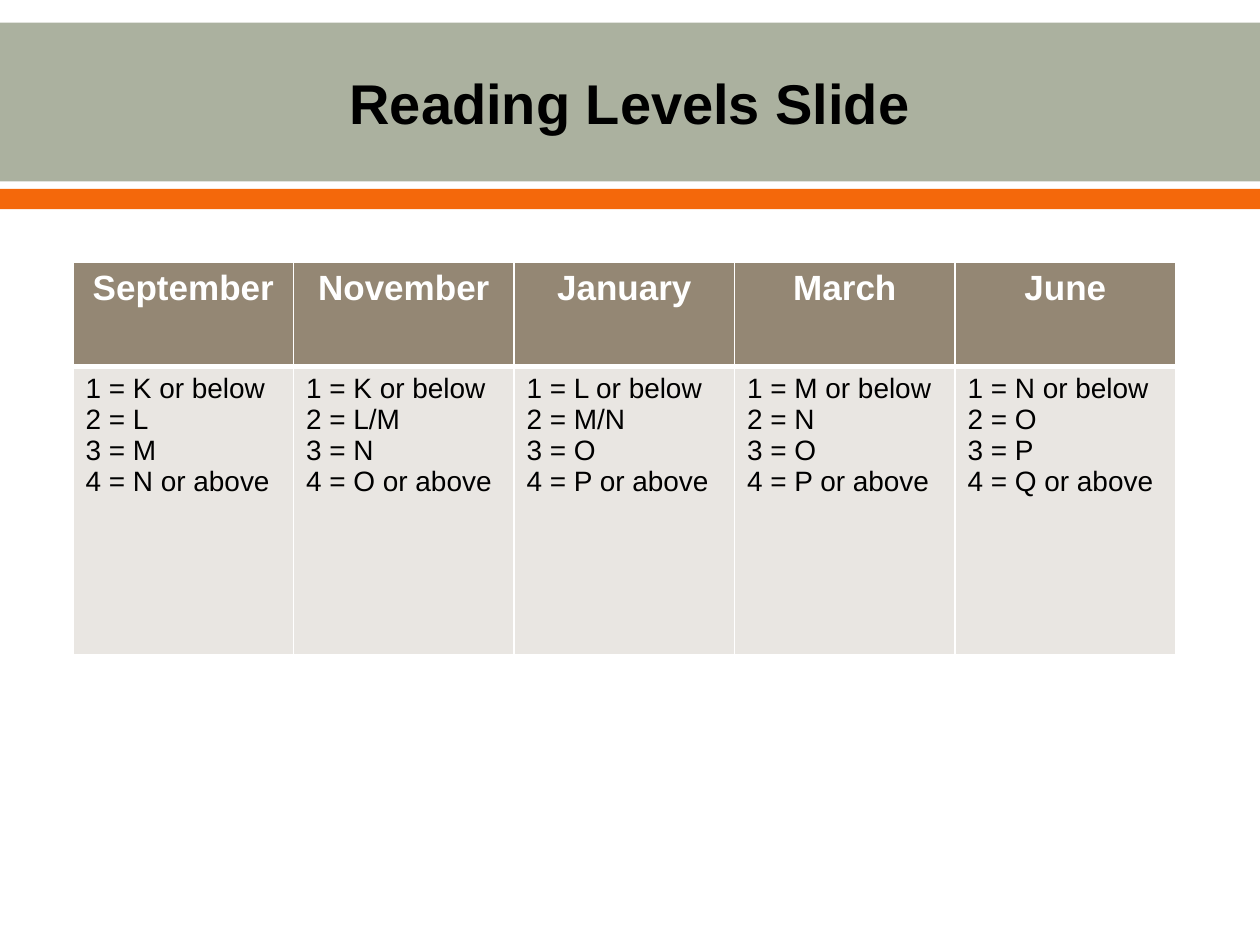
from lxml.etree import SubElement
from pptx import Presentation
from pptx.dml.color import RGBColor
from pptx.enum.shapes import MSO_SHAPE
from pptx.enum.text import MSO_ANCHOR, PP_ALIGN
from pptx.oxml.ns import qn
from pptx.util import Inches, Pt

TITLE = "Reading Levels Slide"
LEVELS = {
    "September": ["K or below", "L", "M", "N or above"],
    "November": ["K or below", "L/M", "N", "O or above"],
    "January": ["L or below", "M/N", "O", "P or above"],
    "March": ["M or below", "N", "O", "P or above"],
    "June": ["N or below", "O", "P", "Q or above"],
}
COLORS = {
    "band": "ABB19F",
    "stripe": "F4680B",
    "header": "948774",
    "body": "E9E6E2",
    "white": "FFFFFF",
    "black": "000000",
}
FONT = "Arial"
COLUMN_WIDTH = 1.75
ROW_HEIGHTS = [0.83, 2.29]


def color(name):
    return RGBColor.from_string(COLORS[name])


def add_bar(page, top, height, fill):
    """Add a full-width rectangle without an outline."""
    bar = page.shapes.add_shape(
        MSO_SHAPE.RECTANGLE, 0, Inches(top), Inches(10), Inches(height))
    bar.shadow.inherit = False
    bar.fill.solid()
    bar.fill.fore_color.rgb = color(fill)
    bar.line.fill.background()


def write_lines(frame, lines, size, ink, bold=False, align=PP_ALIGN.LEFT):
    for index, line in enumerate(lines):
        para = frame.add_paragraph() if index else frame.paragraphs[0]
        para.alignment = align
        span = para.add_run()
        span.text = line
        span.font.name = FONT
        span.font.size = Pt(size)
        span.font.bold = bold
        span.font.color.rgb = color(ink)


def set_borders(cell, widths):
    """Draw white borders; widths maps each side (L, R, T, B) to points."""
    properties = cell._tc.get_or_add_tcPr()
    for side, width in widths.items():
        line = SubElement(properties, qn(f"a:ln{side}"), w=str(Pt(width)))
        fill = SubElement(line, qn("a:solidFill"))
        SubElement(fill, qn("a:srgbClr"), val=COLORS["white"])


def fill_cell(cell, lines, fill, borders, **style):
    set_borders(cell, borders)
    cell.fill.solid()
    cell.fill.fore_color.rgb = color(fill)
    write_lines(cell.text_frame, lines, **style)


def add_title(page):
    box = page.shapes.add_textbox(Inches(0.5), Inches(0.2), Inches(9), Inches(1.22))
    frame = box.text_frame
    frame.word_wrap = True
    frame.vertical_anchor = MSO_ANCHOR.MIDDLE
    frame.margin_top = frame.margin_bottom = Inches(0.1)
    write_lines(frame, [TITLE], 32, "black", bold=True, align=PP_ALIGN.CENTER)


def add_levels_table(page):
    table = page.shapes.add_table(
        len(ROW_HEIGHTS), len(LEVELS), Inches(0.58), Inches(2.08),
        Inches(COLUMN_WIDTH * len(LEVELS)), Inches(sum(ROW_HEIGHTS))).table
    for row, height in zip(table.rows, ROW_HEIGHTS):
        row.height = Inches(height)
    for index, (month, levels) in enumerate(LEVELS.items()):
        table.columns[index].width = Inches(COLUMN_WIDTH)
        fill_cell(table.cell(0, index), [month], "header",
                  {"L": 1, "R": 1, "T": 1, "B": 3},
                  size=20, ink="white", bold=True, align=PP_ALIGN.CENTER)
        scores = [f"{score} = {level}" for score, level in enumerate(levels, 1)]
        fill_cell(table.cell(1, index), scores, "body",
                  {"L": 1, "R": 1, "T": 3, "B": 1}, size=16, ink="black")


def main():
    deck = Presentation()
    deck.slide_width, deck.slide_height = Inches(10), Inches(7.5)
    page = deck.slides.add_slide(deck.slide_layouts[6])
    add_bar(page, 0.18, 1.26, "band")
    add_bar(page, 1.5, 0.16, "stripe")
    add_title(page)
    add_levels_table(page)
    deck.save("out.pptx")


if __name__ == "__main__":
    main()
